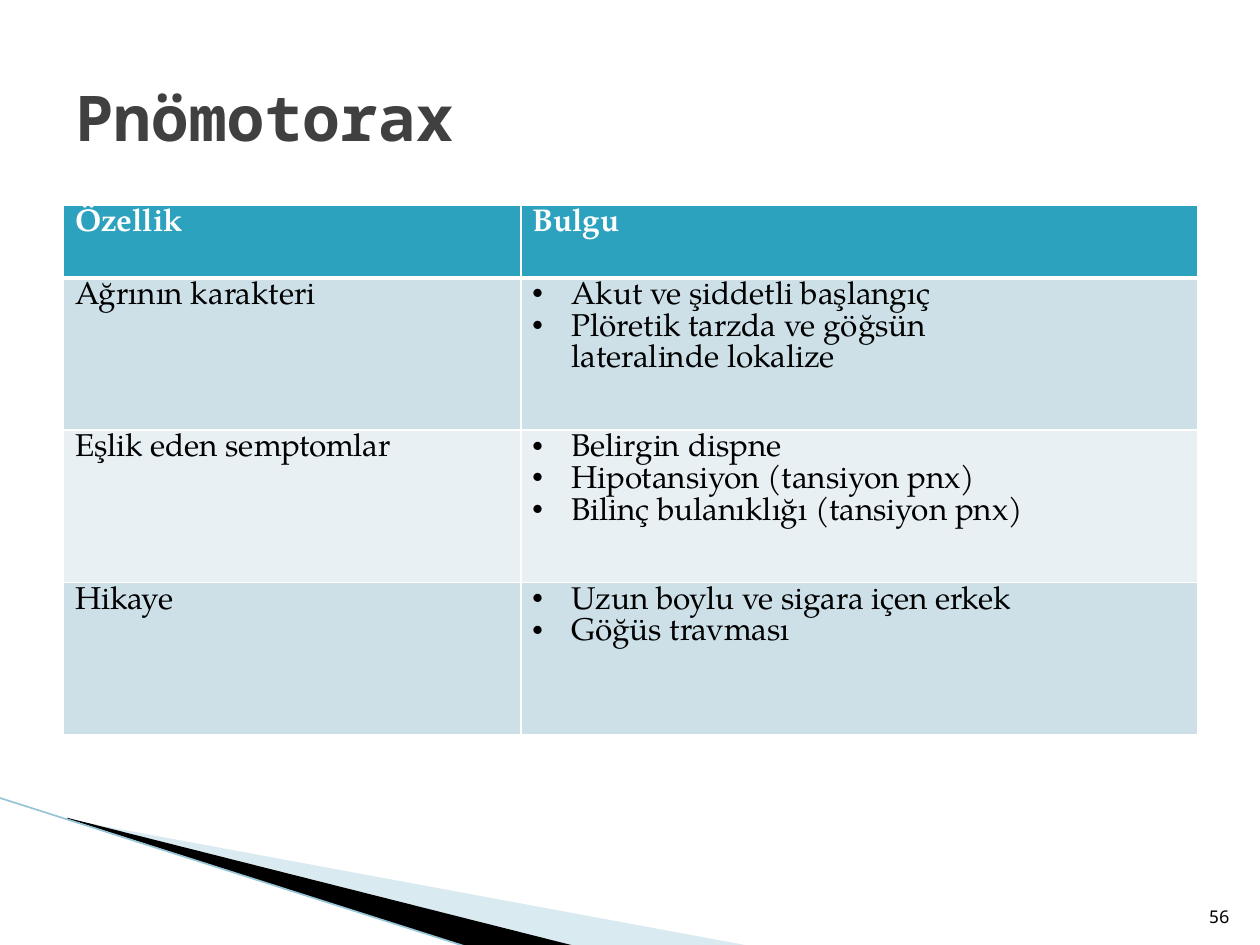
from pptx import Presentation
from pptx.dml.color import RGBColor
from pptx.enum.shapes import MSO_CONNECTOR
from pptx.enum.text import MSO_ANCHOR, PP_ALIGN
from pptx.oxml.ns import qn
from pptx.util import Pt
from lxml.etree import SubElement

SANS = "Noto Sans Mono"
SERIF = "TeX Gyre Pagella"
COLUMN_WIDTHS = [261.4, 386.6]
ROW_HEIGHTS = [41.8, 87, 87, 87]
HEADER_FILL = "2DA2BF"
BAND_FILLS = ["CDE0E8", "E8F0F4"]
HEADINGS = ["Özellik", "Bulgu"]
FINDINGS = [
    ("Ağrının karakteri",
     ["Akut ve şiddetli başlangıç",
      "Plöretik tarzda ve göğsün lateralinde lokalize"], 72),
    ("Eşlik eden semptomlar",
     ["Belirgin dispne",
      "Hipotansiyon (tansiyon pnx)",
      "Bilinç bulanıklığı (tansiyon pnx)"], 0),
    ("Hikaye",
     ["Uzun boylu ve sigara içen erkek", "Göğüs travması"], 0),
]


def color(value):
    return RGBColor.from_string(value)


def add_run(paragraph, text, font, size, ink, bold=False):
    run = paragraph.add_run()
    run.text = text
    run.font.name = font
    run.font.size = Pt(size)
    run.font.bold = bold
    run.font.color.rgb = color(ink)
    return run


def add_label(slide, box, text, size, ink, bold, anchor, align):
    frame = slide.shapes.add_textbox(*map(Pt, box)).text_frame
    frame.word_wrap = True
    frame.vertical_anchor = anchor
    paragraph = frame.paragraphs[0]
    paragraph.alignment = align
    add_run(paragraph, text, SANS, size, ink, bold)


def add_wedge(slide, points, fill, opacity=100):
    start, *others = [(Pt(x), Pt(y)) for x, y in points]
    builder = slide.shapes.build_freeform(*start)
    builder.add_line_segments(others, close=True)
    wedge = builder.convert_to_shape()
    wedge.shadow.inherit = False
    wedge.fill.solid()
    wedge.fill.fore_color.rgb = color(fill)
    wedge.line.fill.background()
    if opacity < 100:
        tint = wedge.fill._xPr.find(".//" + qn("a:srgbClr"))
        SubElement(tint, qn("a:alpha"), val=str(opacity * 1000))


def add_edge(slide, start, end, ink, width):
    edge = slide.shapes.add_connector(
        MSO_CONNECTOR.STRAIGHT, *map(Pt, start + end))
    edge.line.color.rgb = color(ink)
    edge.line.width = Pt(width)
    SubElement(edge._element.spPr, qn("a:effectLst"))


def style_cell(cell, fill, bottom_width=1, top_width=1, right_margin=0):
    """Set margins, white borders and fill; borders must precede the fill."""
    cell.margin_left = cell.margin_bottom = 0
    cell.margin_top = Pt(2.2)
    cell.margin_right = Pt(right_margin)
    properties = cell._tc.get_or_add_tcPr()
    widths = {"lnL": 1, "lnR": 1, "lnT": top_width, "lnB": bottom_width}
    for side, width in widths.items():
        border = SubElement(properties, qn("a:" + side), w=str(Pt(width)))
        paint = SubElement(border, qn("a:solidFill"))
        SubElement(paint, qn("a:srgbClr"), val="FFFFFF")
    cell.fill.solid()
    cell.fill.fore_color.rgb = color(fill)


def write_cell(cell, lines, ink="000000", bold=False, bulleted=False):
    frame = cell.text_frame
    for index, line in enumerate(lines):
        paragraph = frame.add_paragraph() if index else frame.paragraphs[0]
        properties = paragraph._p.get_or_add_pPr()
        properties.set("marL", str(Pt(28.8 if bulleted else 6.5)))
        properties.set("indent", str(Pt(-22.3 if bulleted else 0)))
        if bulleted:
            SubElement(properties, qn("a:buChar"), char="•")
        run = add_run(paragraph, line, SERIF, 18, ink, bold)
        run.font._element.set("spc", "-5")


def add_findings_table(slide):
    table = slide.shapes.add_table(
        len(ROW_HEIGHTS), len(COLUMN_WIDTHS), Pt(36.4), Pt(117),
        Pt(sum(COLUMN_WIDTHS)), Pt(sum(ROW_HEIGHTS))).table
    table.first_row = table.horz_banding = False
    for column, width in zip(table.columns, COLUMN_WIDTHS):
        column.width = Pt(width)
    for row, height in zip(table.rows, ROW_HEIGHTS):
        row.height = Pt(height)
    for index, heading in enumerate(HEADINGS):
        cell = table.cell(0, index)
        style_cell(cell, HEADER_FILL, bottom_width=3)
        write_cell(cell, [heading], "FFFFFF", bold=True)
    for row, (feature, findings, right_margin) in enumerate(FINDINGS, 1):
        fill = BAND_FILLS[(row - 1) % 2]
        top_width = 3 if row == 1 else 1
        feature_cell, findings_cell = table.cell(row, 0), table.cell(row, 1)
        style_cell(feature_cell, fill, top_width=top_width)
        write_cell(feature_cell, [feature])
        style_cell(findings_cell, fill, top_width=top_width,
                   right_margin=right_margin)
        write_cell(findings_cell, findings, bulleted=True)


def main():
    deck = Presentation()
    deck.slide_width, deck.slide_height = Pt(720), Pt(540)
    slide = deck.slides.add_slide(deck.slide_layouts[6])
    add_wedge(slide, [(39.6, 468.5), (428.4, 540.5), (328.3, 540.5),
                      (39.6, 468)], "A0CBDC", opacity=40)
    add_wedge(slide, [(38.2, 467.3), (329, 540.7), (267.8, 541.4),
                      (38.9, 468)], "000000")
    add_edge(slide, (-0.7, 455.8), (267.8, 541.4), "97C5D8", 0.95)
    add_findings_table(slide)
    add_label(slide, (681, 504.7, 28.8, 28.8), "56", 10, "000000", False,
              MSO_ANCHOR.BOTTOM, PP_ALIGN.RIGHT)
    add_label(slide, (36, 21.6, 607.7, 90), "Pnömotorax", 36, "404040", True,
              MSO_ANCHOR.MIDDLE, PP_ALIGN.LEFT)
    deck.save("out.pptx")


if __name__ == "__main__":
    main()
